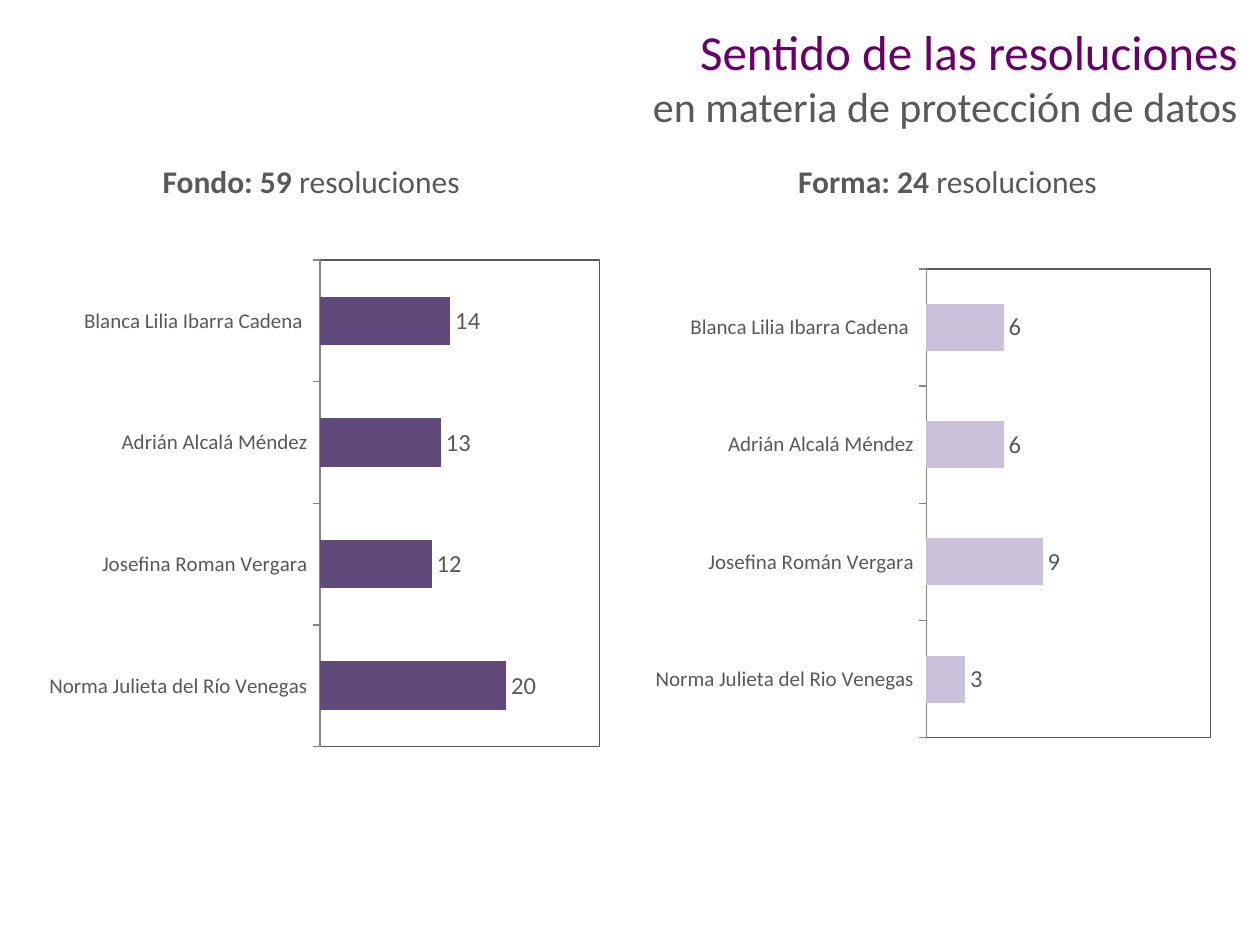
from lxml import etree
from pptx import Presentation
from pptx.chart.data import CategoryChartData
from pptx.dml.color import RGBColor
from pptx.enum.chart import XL_CHART_TYPE as ChartType
from pptx.enum.chart import XL_LABEL_POSITION as LabelPosition
from pptx.enum.chart import XL_TICK_MARK as TickMark
from pptx.enum.text import PP_ALIGN as Align
from pptx.oxml import parse_xml
from pptx.oxml.ns import nsdecls, qn
from pptx.util import Inches, Pt

FONT = "Calibri"
GRAY = "595959"
PURPLE = "660066"
AXIS_GRAY = "868686"


def color(hex_code):
    return RGBColor.from_string(hex_code)


def style_font(font, size, hex_code, bold=False):
    font.name = FONT
    font.size = Pt(size)
    font.bold = bold
    font.color.rgb = color(hex_code)


def add_span(para, text, size, hex_code=GRAY, bold=False):
    span = para.add_run()
    span.text = text
    style_font(span.font, size, hex_code, bold)


def add_text_box(page, left, top, width, height, align):
    """Add a wrapping text box and return its first paragraph."""
    box = page.shapes.add_textbox(Inches(left), Inches(top), Inches(width), Inches(height))
    box.text_frame.word_wrap = True
    para = box.text_frame.paragraphs[0]
    para.alignment = align
    return para


def add_title(page):
    para = add_text_box(page, 0.04, 0.12, 9.88, 0.98, Align.RIGHT)
    add_span(para, "Sentido de las resoluciones", 28, PURPLE)
    para.add_line_break()
    add_span(para, "en materia de protección de datos", 24)


def add_heading(page, left, kind, total):
    para = add_text_box(page, left, 1.24, 4.8, 0.4, Align.CENTER)
    add_span(para, f"{kind}: {total} ", 18, bold=True)
    add_span(para, "resoluciones", 18)


def frame_plot(chart, frame):
    """Fix the inner plot area (x, y, w, h as fractions) and outline it."""
    plot_area = chart.element.find(".//" + qn("c:plotArea"))
    for layout in plot_area.findall(qn("c:layout")):
        plot_area.remove(layout)
    layout = parse_xml(f"<c:layout {nsdecls('c')}><c:manualLayout/></c:layout>")
    settings = [("layoutTarget", "inner"), ("xMode", "edge"), ("yMode", "edge")]
    settings += zip("xywh", frame)
    for tag, value in settings:
        etree.SubElement(layout[0], qn(f"c:{tag}")).set("val", str(value))
    plot_area.insert(0, layout)
    plot_area.append(parse_xml(
        f"<c:spPr {nsdecls('c', 'a')}><a:noFill/><a:ln w='9525'><a:solidFill>"
        f"<a:srgbClr val='{GRAY}'/></a:solidFill></a:ln></c:spPr>"))


def add_bar_chart(page, place, names, values, bar_color, maximum, frame, overlap=0):
    data = CategoryChartData()
    data.categories = names
    data.add_series("Series 1", values)
    lengths = [Inches(length) for length in place]
    chart = page.shapes.add_chart(ChartType.BAR_CLUSTERED, *lengths, data).chart
    chart.has_legend = False
    chart.has_title = False
    style_font(chart.font, 18, "000000")

    names_axis = chart.category_axis
    names_axis.major_tick_mark = TickMark.OUTSIDE
    names_axis.format.line.color.rgb = color(AXIS_GRAY)
    style_font(names_axis.tick_labels.font, 12, GRAY)

    values_axis = chart.value_axis
    values_axis.visible = False
    values_axis.has_major_gridlines = False
    values_axis.minimum_scale = 0
    values_axis.maximum_scale = maximum
    values_axis.major_unit = 20

    plot = chart.plots[0]
    plot.vary_by_categories = False
    plot.gap_width = 150
    plot.overlap = overlap
    plot.has_data_labels = True
    plot.data_labels.show_value = True
    plot.data_labels.position = LabelPosition.OUTSIDE_END
    style_font(plot.data_labels.font, 14, GRAY)

    fill = plot.series[0].format.fill
    fill.solid()
    fill.fore_color.rgb = color(bar_color)
    frame_plot(chart, frame)


def main():
    deck = Presentation()
    deck.slide_width, deck.slide_height = Inches(10), Inches(7.5)
    page = deck.slides.add_slide(deck.slide_layouts[6])

    add_title(page)
    add_heading(page, 0.07, "Fondo", 59)
    add_heading(page, 5.12, "Forma", 24)

    shared_names = ["Adrián Alcalá Méndez", "Blanca Lilia Ibarra Cadena "]
    add_bar_chart(
        page, (0.07, 1.93, 5.04, 4.49),
        ["Norma Julieta del Río Venegas", "Josefina Roman Vergara"] + shared_names,
        (20, 12, 13, 14), "604A7B", 30, (0.49, 0.03, 0.44, 0.86))
    add_bar_chart(
        page, (5, 1.93, 4.8, 4.09),
        ["Norma Julieta del Rio Venegas", "Josefina Román Vergara"] + shared_names,
        (3, 9, 6, 6), "CCC1DA", 22, (0.49, 0.05, 0.47, 0.91), overlap=100)

    deck.save("out.pptx")


if __name__ == "__main__":
    main()
